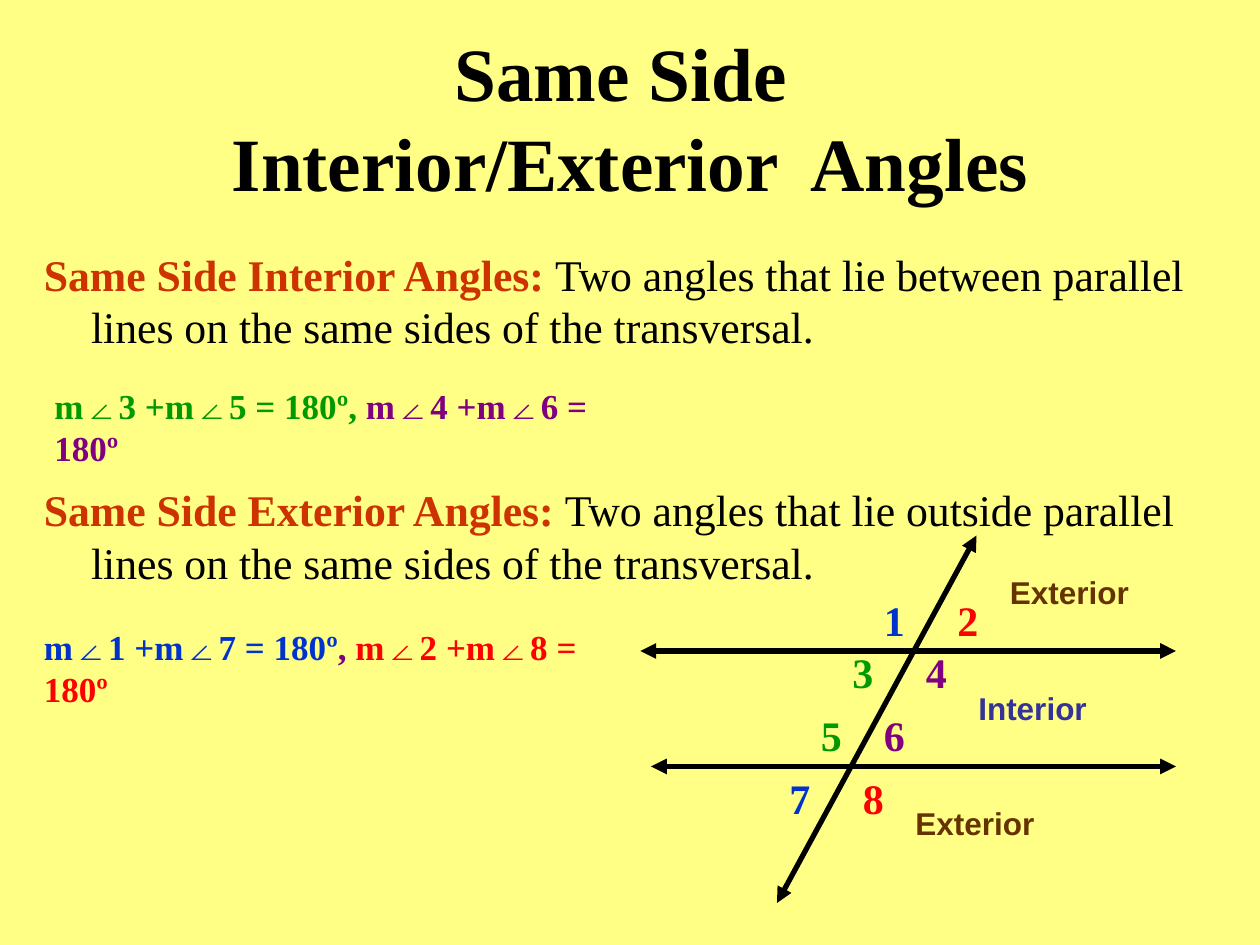
import pptx
import pptx.dml.color
import pptx.enum.shapes
import pptx.enum.text
import pptx.oxml
import pptx.oxml.ns
import pptx.util

RGBColor = pptx.dml.color.RGBColor
PALE_YELLOW = RGBColor(0xFF, 0xFF, 0x85)
BLACK = RGBColor(0, 0, 0)
RUST = RGBColor(0xCC, 0x33, 0x00)
GREEN = RGBColor(0x00, 0x99, 0x00)
PURPLE = RGBColor(0x80, 0x00, 0x80)
BLUE = RGBColor(0x00, 0x33, 0xCC)
RED = RGBColor(0xFF, 0x00, 0x00)
INDIGO = RGBColor(0x33, 0x33, 0x99)
BROWN = RGBColor(0x66, 0x33, 0x00)
SERIF, SANS = "Times New Roman", "Arial"

# Content: places are (left, top, width, height) in px, 120 px to the inch
TITLE = ["Same Side ", "Interior/Exterior  Angles"]
TITLE_BOX = (60, 36, 1080, 150)
DEFINITIONS = [
    ("Same Side Interior Angles: ",
     "Two angles that lie between parallel lines on the same sides of the transversal."),
    ("Same Side Exterior Angles: ",
     "Two angles that lie outside parallel lines on the same sides of the transversal."),
]
DEFINITION_BOX = (30, 230, 1130, 530)
DEFINITION_GAP = 124
HANGING_INDENT = 45
EQUATIONS = [
    ((40, 360, 580, 52), [("m∠3 +m∠5 = 180º,", GREEN), (" m∠4 +m∠6 = 180º", PURPLE)]),
    ((30, 590, 570, 52), [("m∠1 +m∠7 = 180º", BLUE), (", ", PURPLE),
                          ("m∠2 +m∠8 = 180º", RED)]),
]
LINES = [  # from x, from y, to x, to y
    (610, 620, 1120, 620),
    (620, 730, 1120, 730),
    (930, 510, 740, 860),
]
ANGLE_SIZE = (50, 60)
ANGLES = [  # number, left, top, colour
    ("1", 830, 560, BLUE), ("2", 900, 560, RED),
    ("3", 800, 610, GREEN), ("4", 870, 610, PURPLE),
    ("5", 770, 670, GREEN), ("6", 830, 670, PURPLE),
    ("7", 740, 730, BLUE), ("8", 810, 730, RED),
]
REGION_SIZE = (190, 48)
REGIONS = [  # name, left, top, colour
    ("Exterior", 950, 540, BROWN),
    ("Interior", 920, 650, INDIGO),
    ("Exterior", 860, 760, BROWN),
]


def px(value):
    return pptx.util.Emu(value * 7620)


def add_text_box(slide, box, **frame_format):
    text_frame = slide.shapes.add_textbox(*map(px, box)).text_frame
    text_frame.word_wrap = True
    for name, value in frame_format.items():
        setattr(text_frame, name, value)
    return text_frame


def add_run(paragraph, text, size, color, bold=True, font_name=SERIF):
    run = paragraph.add_run()
    run.text = text
    font_format = {"name": font_name, "size": pptx.util.Pt(size), "bold": bold}
    for name, value in font_format.items():
        setattr(run.font, name, value)
    run.font.color.rgb = color


def add_label(slide, box, runs, size, font_name=SERIF):
    text_frame = add_text_box(
        slide, box, auto_size=pptx.enum.text.MSO_AUTO_SIZE.SHAPE_TO_FIT_TEXT)
    for text, color in runs:
        add_run(text_frame.paragraphs[0], text, size, color, font_name=font_name)


def add_double_arrow(slide, ends):
    connector = slide.shapes.add_connector(
        pptx.enum.shapes.MSO_CONNECTOR.STRAIGHT, *map(px, ends))
    connector.line.color.rgb = BLACK
    connector.line.width = pptx.util.Pt(3)
    line_element = connector.line._get_or_add_ln()
    for tag in ("a:headEnd", "a:tailEnd"):
        arrowhead = pptx.oxml.parse_xml(
            f'<{tag} {pptx.oxml.ns.nsdecls("a")} type="triangle"/>')
        line_element.append(arrowhead)
    connector._element.spPr.append(
        pptx.oxml.parse_xml(f'<a:effectLst {pptx.oxml.ns.nsdecls("a")}/>'))


def main():
    presentation = pptx.Presentation()
    presentation.slide_width, presentation.slide_height = px(1200), px(900)
    slide = presentation.slides.add_slide(presentation.slide_layouts[6])
    slide.background.fill.solid()
    slide.background.fill.fore_color.rgb = PALE_YELLOW

    # Title
    title = add_text_box(slide, TITLE_BOX,
                         vertical_anchor=pptx.enum.text.MSO_ANCHOR.MIDDLE)
    paragraph = title.paragraphs[0]
    paragraph.alignment = pptx.enum.text.PP_ALIGN.CENTER
    for index, text in enumerate(TITLE):
        if index:
            paragraph.add_line_break()
        add_run(paragraph, text, 43, BLACK)

    # Definitions with hanging indents
    definitions = add_text_box(slide, DEFINITION_BOX)
    for index, (term, meaning) in enumerate(DEFINITIONS):
        paragraph = definitions.add_paragraph() if index else definitions.paragraphs[0]
        paragraph.space_before = px(DEFINITION_GAP * index)
        properties = paragraph._p.get_or_add_pPr()
        properties.set("marL", str(px(HANGING_INDENT)))
        properties.set("indent", str(-px(HANGING_INDENT)))
        add_run(paragraph, term, 25, RUST)
        add_run(paragraph, meaning, 25, BLACK, bold=False)

    # Equations
    for box, runs in EQUATIONS:
        add_label(slide, box, runs, 20)

    # Parallel lines and transversal
    for ends in LINES:
        add_double_arrow(slide, ends)

    # Angle numbers and region names
    for number, left, top, color in ANGLES:
        add_label(slide, (left, top, *ANGLE_SIZE), [(number, color)], 24)
    for name, left, top, color in REGIONS:
        add_label(slide, (left, top, *REGION_SIZE), [(name, color)], 18, SANS)

    presentation.save("out.pptx")


if __name__ == "__main__":
    main()
